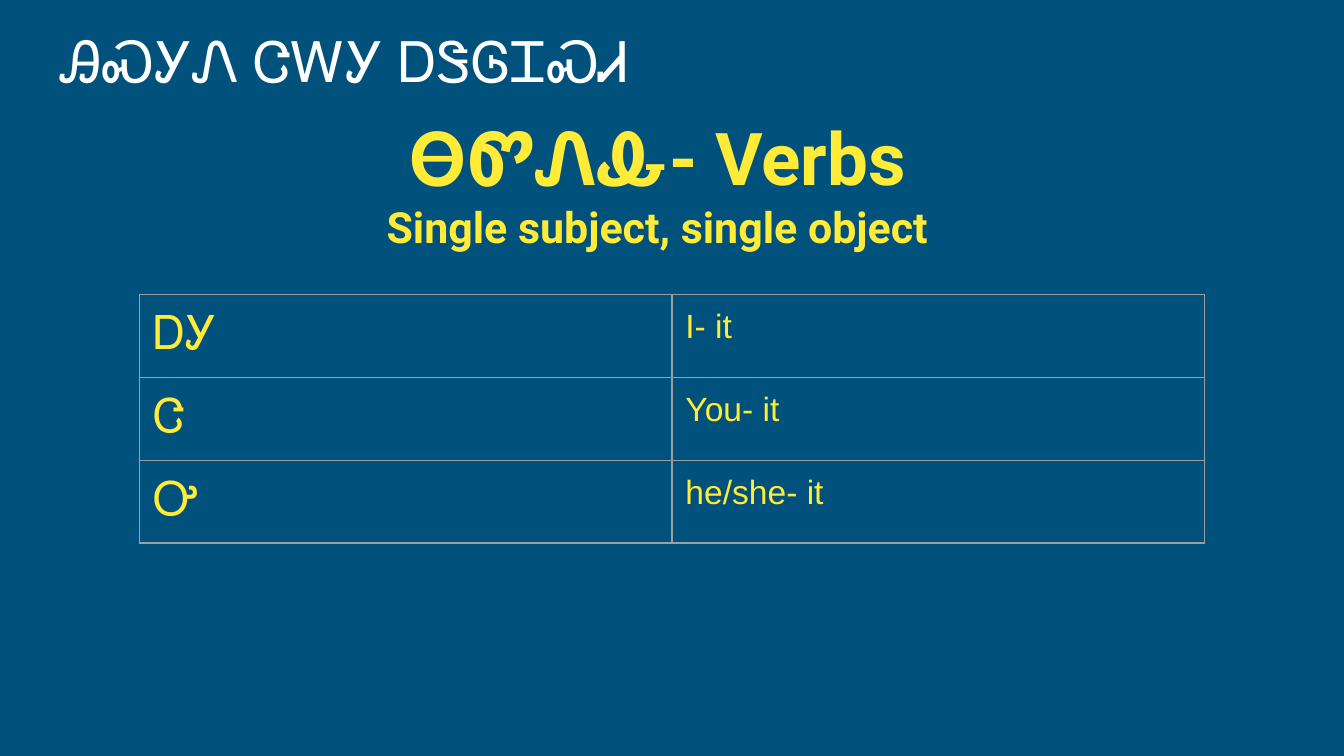
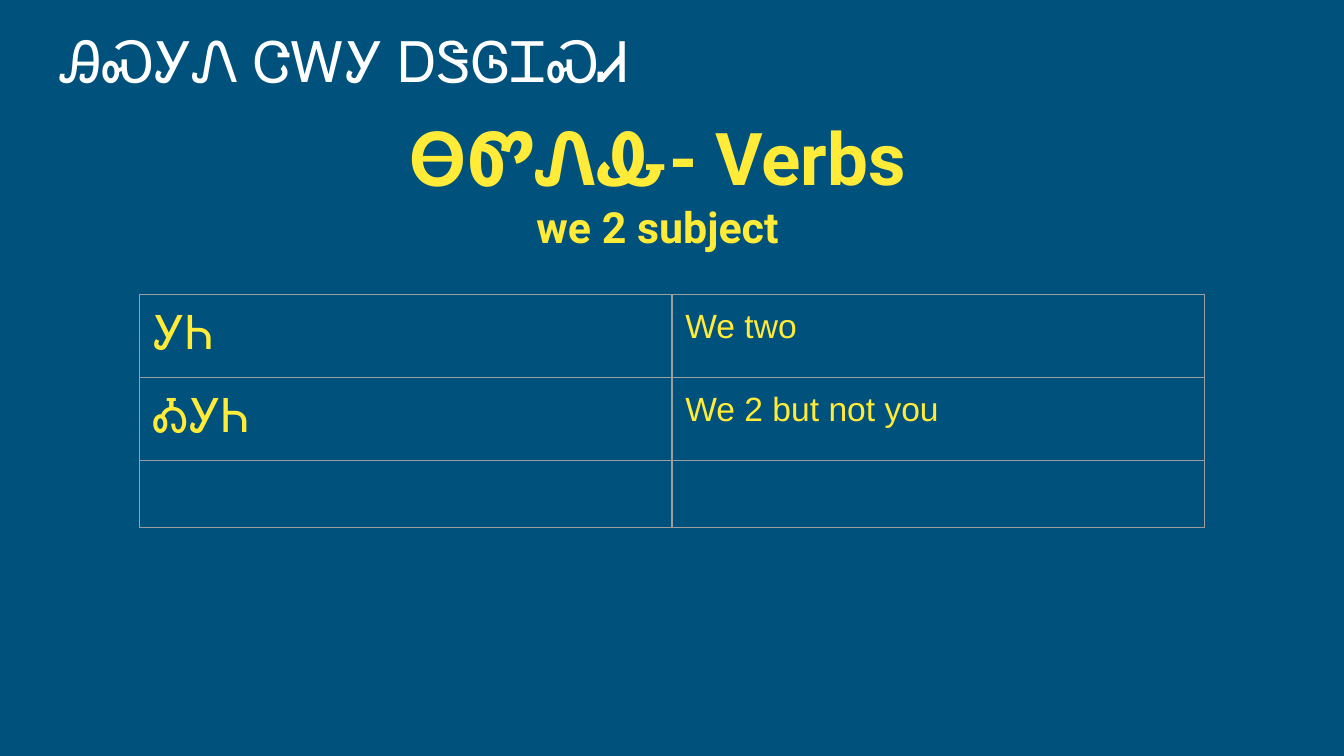
from pptx import Presentation
from pptx.dml.color import RGBColor
from pptx.enum.text import MSO_ANCHOR as Anchor, MSO_AUTO_SIZE as AutoSize, PP_ALIGN as Align
from pptx.oxml import parse_xml
from pptx.oxml.ns import nsdecls
from pptx.util import Pt

BLUE = RGBColor(0x00, 0x51, 0x7C)
WHITE = RGBColor(0xFF, 0xFF, 0xFF)
YELLOW = RGBColor(0xFF, 0xEB, 0x38)
GREY = RGBColor(0x9E, 0x9E, 0x9E)

INSET = Pt(7.2)
TITLE_ONLY = 5
TITLE_BOX = (25.92, 3.6, 658.8, 54)
HEADING_BOX = (180.72, 53.28, 343.44, 90)
TABLE_BOX = (74.88, 157.68, 570.24, 90.72)

TITLE = "ᎯᏍᎩᏁ ᏣᎳᎩ ᎠᏕᎶᏆᏍᏗ"
HEADING = "ᎾᏛᏁᎲ- Verbs"
SLIDES = [
    ("Single subject, single object",
     [("ᎠᎩ", "I- it"), ("Ꮳ", "You- it"), ("Ꭴ", "he/she- it")]),
    ("we 2 subject",
     [("ᎩᏂ", "We two"), ("ᎣᎩᏂ", "We 2 but not you"), ("", "")]),
]


def write(para, text, size, font="Arial", color=YELLOW, bold=False, align=Align.LEFT):
    """Write one formatted span into a paragraph."""
    para.alignment = align
    span = para.add_run()
    span.text = text
    span.font.size = Pt(size)
    span.font.name = font
    span.font.color.rgb = color
    span.font.bold = bold


def set_insets(holder):
    """Give a text frame or table cell the same margin on every side."""
    holder.margin_left = holder.margin_right = INSET
    holder.margin_top = holder.margin_bottom = INSET


def add_title(page, box):
    """Place and format the title placeholder."""
    title = page.shapes.title
    title.left, title.top, title.width, title.height = map(Pt, box)
    frame = title.text_frame
    set_insets(frame)
    frame.word_wrap = True
    frame.auto_size = AutoSize.NONE
    frame.vertical_anchor = Anchor.BOTTOM
    write(frame.paragraphs[0], TITLE, 30, font="Roboto Slab", color=WHITE)


def add_heading(page, box, subject):
    """Add the centred heading with its subject line."""
    frame = page.shapes.add_textbox(*map(Pt, box)).text_frame
    set_insets(frame)
    frame.word_wrap = True
    frame.auto_size = AutoSize.SHAPE_TO_FIT_TEXT
    style = {"font": "Roboto", "bold": True, "align": Align.CENTER}
    write(frame.paragraphs[0], HEADING, 39, **style)
    write(frame.add_paragraph(), subject, 23, **style)


def style_cell(cell):
    """Give a cell its insets, grey borders and no fill."""
    set_insets(cell)
    properties = cell._tc.get_or_add_tcPr()
    for side in "LRTB":
        properties.append(parse_xml(
            f'<a:ln{side} {nsdecls("a")} w="{Pt(0.75)}"><a:solidFill>'
            f'<a:srgbClr val="{GREY}"/></a:solidFill></a:ln{side}>'))
    cell.fill.background()


def add_prefix_table(page, box, rows):
    """Add the table of verb prefixes and their meanings."""
    table = page.shapes.add_table(len(rows), 2, *map(Pt, box)).table
    table.first_row = table.horz_banding = False
    for row, texts in enumerate(rows):
        for column, (text, size) in enumerate(zip(texts, (25, 18))):
            cell = table.cell(row, column)
            style_cell(cell)
            if text:
                write(cell.text_frame.paragraphs[0], text, size)


def add_verb_slide(deck, subject, rows):
    """Add one slide with title, heading and prefix table."""
    page = deck.slides.add_slide(deck.slide_layouts[TITLE_ONLY])
    add_title(page, TITLE_BOX)
    add_heading(page, HEADING_BOX, subject)
    add_prefix_table(page, TABLE_BOX, rows)


def main():
    """Build and save the deck."""
    deck = Presentation()
    deck.slide_width, deck.slide_height = Pt(720), Pt(405)
    background = deck.slide_master.background.fill
    background.solid()
    background.fore_color.rgb = BLUE
    for subject, rows in SLIDES:
        add_verb_slide(deck, subject, rows)
    deck.save("out.pptx")


if __name__ == "__main__":
    main()
